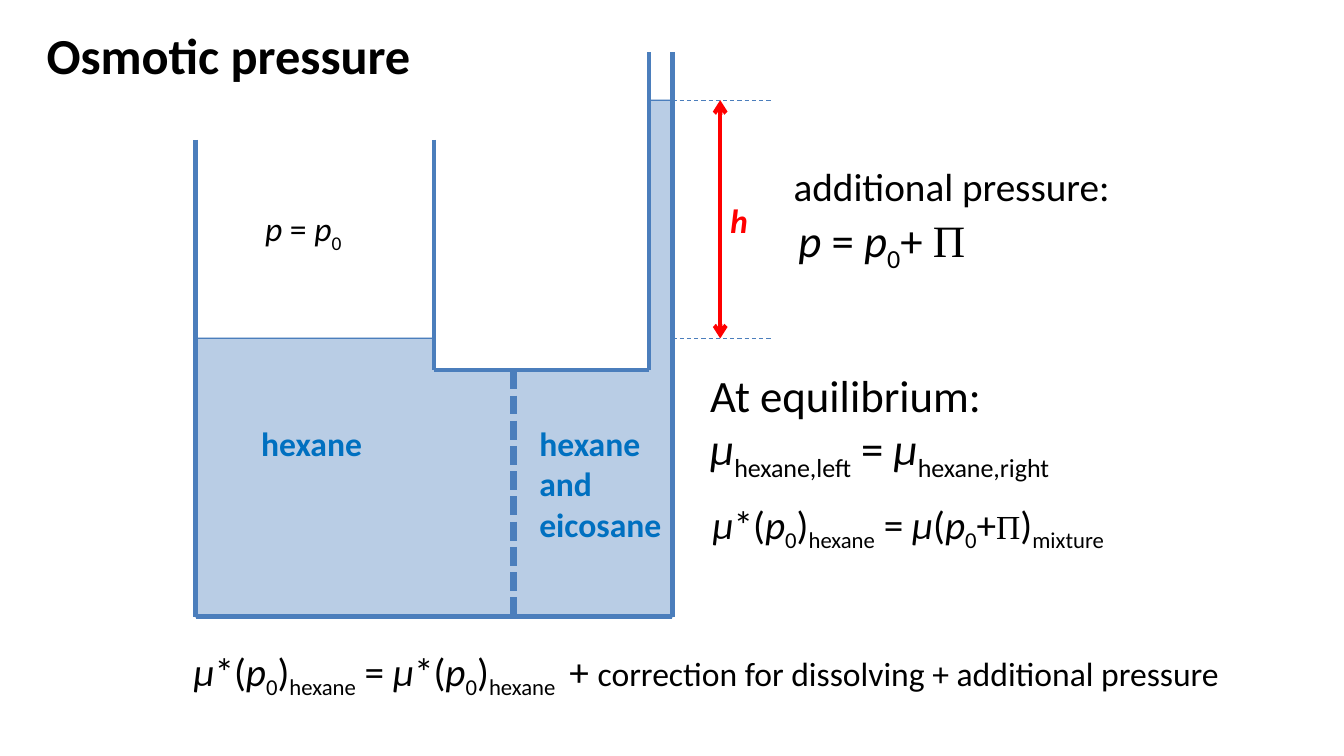
from dataclasses import dataclass

from lxml.etree import SubElement
from pptx import Presentation
from pptx.dml.color import RGBColor
from pptx.enum.dml import MSO_LINE
from pptx.enum.shapes import MSO_CONNECTOR as Connector, MSO_SHAPE as Shape
from pptx.enum.text import MSO_AUTO_SIZE as AutoSize
from pptx.oxml.ns import qn
from pptx.util import Inches, Pt

COLORS = {
    "liquid": "B9CDE5",
    "glass": "4B7EBC",
    "label": "0070C0",
    "height": "FF0000",
    "text": "000000",
}
PLAIN, ITALIC, SUB, GREEK, SMALL = "plain", "italic", "sub", "greek", "small"
MU = (ITALIC, "µ")
P_ZERO = [(ITALIC, "p"), (SUB, "0")]
P_EQUALS = [(ITALIC, "p"), (PLAIN, " = "), *P_ZERO]
PURE_HEXANE = [MU, (PLAIN, "*("), *P_ZERO, (PLAIN, ")")]

LEFT_WALL, INNER_WALL, MEMBRANE, TUBE, RIGHT_WALL = 0, 30, 40, 57, 60
TUBE_TOP, RAISED, VESSEL_TOP, LEVEL, CHANNEL, FLOOR = 0, 6, 11, 36, 40, 71


@dataclass
class Grid:
    left: float
    top: float
    unit: float

    def x(self, col):
        return Inches(self.left + col * self.unit)

    def y(self, row):
        return Inches(self.top + row * self.unit)

    def size(self, count):
        return Inches(count * self.unit)


def color(name):
    return RGBColor.from_string(COLORS[name])


def add_line(shapes, grid, start, end, width, name="glass", dash=None, arrows=False):
    line = shapes.add_connector(
        Connector.STRAIGHT, grid.x(start[0]), grid.y(start[1]), grid.x(end[0]), grid.y(end[1])
    )
    line.line.width = Pt(width)
    line.line.color.rgb = color(name)
    if dash:
        line.line.dash_style = dash
    if arrows:
        stroke = line.line._get_or_add_ln()
        for end_tag in ("a:headEnd", "a:tailEnd"):
            SubElement(stroke, qn(end_tag)).set("type", "arrow")
    SubElement(line._element.spPr, qn("a:effectLst"))


def add_text(shapes, grid, place, lines, size, name="text", bold=False, small=24):
    col, row, cols, rows = place
    box = shapes.add_textbox(grid.x(col), grid.y(row), grid.size(cols), grid.size(rows))
    frame = box.text_frame
    frame.word_wrap = True
    frame.auto_size = AutoSize.SHAPE_TO_FIT_TEXT
    for index, spans in enumerate(lines):
        para = frame.add_paragraph() if index else frame.paragraphs[0]
        for style, words in spans:
            span = para.add_run()
            span.text = words
            span.font.name = "Times New Roman" if style == GREEK else "Calibri"
            span.font.size = Pt(small if style in (GREEK, SMALL) else size)
            span.font.bold = bold
            span.font.italic = style == ITALIC
            span.font.color.rgb = color(name)
            if style == SUB:
                span._r.get_or_add_rPr().set("baseline", "-25000")


def draw_liquid(page, grid):
    shapes = page.shapes.add_group_shape().shapes
    for left, top, right, bottom in (
        (LEFT_WALL, LEVEL, INNER_WALL, CHANNEL + 2.5),
        (LEFT_WALL, CHANNEL + 0.4, RIGHT_WALL - 1, FLOOR),
        (TUBE, RAISED, RIGHT_WALL, FLOOR),
    ):
        pool = shapes.add_shape(
            Shape.RECTANGLE, grid.x(left), grid.y(top), grid.size(right - left), grid.size(bottom - top)
        )
        pool.shadow.inherit = False
        pool.fill.solid()
        pool.fill.fore_color.rgb = color("liquid")
        pool.line.color.rgb = color("liquid")
        pool.line.width = Pt(2)


def draw_vessel(page, grid):
    for start, end in (
        ((RIGHT_WALL, TUBE_TOP), (RIGHT_WALL, FLOOR)),
        ((RIGHT_WALL, FLOOR), (LEFT_WALL, FLOOR)),
        ((LEFT_WALL, VESSEL_TOP), (LEFT_WALL, FLOOR)),
        ((INNER_WALL, VESSEL_TOP), (INNER_WALL, CHANNEL)),
        ((INNER_WALL, CHANNEL), (TUBE, CHANNEL)),
        ((TUBE, CHANNEL), (TUBE, TUBE_TOP)),
    ):
        add_line(page.shapes, grid, start, end, 3)
    add_line(page.shapes, grid, (MEMBRANE, CHANNEL), (MEMBRANE, FLOOR), 4.5, dash=MSO_LINE.SQUARE_DOT)
    add_line(page.shapes, grid, (LEFT_WALL, LEVEL), (INNER_WALL, LEVEL), 0.75)
    add_line(page.shapes, grid, (TUBE, RAISED), (RIGHT_WALL, RAISED), 0.75)


def label_vessel(page, grid):
    mixture = [[(PLAIN, word)] for word in ("hexane", "and", "eicosane")]
    add_text(page.shapes, grid, (7, 46, 25, 6.4), mixture[:1], 24, "label", bold=True)
    add_text(page.shapes, grid, (42, 46, 25, 16.6), mixture, 24, "label", bold=True)
    add_text(page.shapes, grid, (7.5, 19, 19, 6.4), [P_EQUALS], 24)


def draw_height(page, grid):
    shapes = page.shapes.add_group_shape().shapes
    arrow = RIGHT_WALL + 6
    add_line(shapes, grid, (arrow, RAISED), (arrow, LEVEL), 3, "height", arrows=True)
    add_text(shapes, grid, (arrow, 18, 5, 6.4), [[(ITALIC, "h")]], 24, "height", bold=True)
    pressure = [*P_EQUALS, (PLAIN, "+ "), (GREEK, "Π")]
    add_text(shapes, grid, (74.6, 19.5, 32.5, 8.1), [pressure], 32, small=32)
    add_text(shapes, grid, (74, 13.2, 42.8, 7.2), [[(PLAIN, "additional pressure:")]], 28)
    for row in (LEVEL, RAISED):
        add_line(shapes, grid, (RIGHT_WALL, row), (RIGHT_WALL + 12.7, row), 0.75, dash=MSO_LINE.DASH)


def write_equilibrium(page, grid):
    balance = [MU, (SUB, "hexane,left"), (PLAIN, " = "), MU, (SUB, "hexane,right")]
    add_text(page.shapes, grid, (63.5, 39, 69.4, 15), [[(PLAIN, "At equilibrium:")], balance], 32)
    mixture = [
        *PURE_HEXANE, (SUB, "hexane"), (PLAIN, " = "),
        MU, (PLAIN, "("), *P_ZERO, (PLAIN, "+"), (GREEK, "Π"), (PLAIN, ")"), (SUB, "mixture"),
    ]
    add_text(page.shapes, grid, (63.8, 55.7, 64, 7.2), [mixture], 28)


def write_summary(page, grid):
    summary = [
        *PURE_HEXANE, (SUB, "hexane"), (PLAIN, " = "), *PURE_HEXANE, (SUB, "hexane "), (PLAIN, " + "),
        (SMALL, "correction for dissolving + additional pressure"),
    ]
    add_text(page.shapes, grid, (-1.5, 74.2, 142.4, 7.2), [summary], 28)


def write_title(page, grid):
    add_text(page.shapes, grid, (-20, -4.2, 100, 9), [[(PLAIN, "Osmotic pressure")]], 36, bold=True)


def main():
    deck = Presentation()
    deck.slide_width, deck.slide_height = Inches(13.33), Inches(7.5)
    page = deck.slides.add_slide(deck.slide_layouts[6])
    grid = Grid(left=1.94, top=0.52, unit=4.73 / RIGHT_WALL)
    for region in (
        draw_liquid, draw_vessel, label_vessel, write_equilibrium, write_summary, write_title, draw_height
    ):
        region(page, grid)
    deck.save("out.pptx")


if __name__ == "__main__":
    main()
